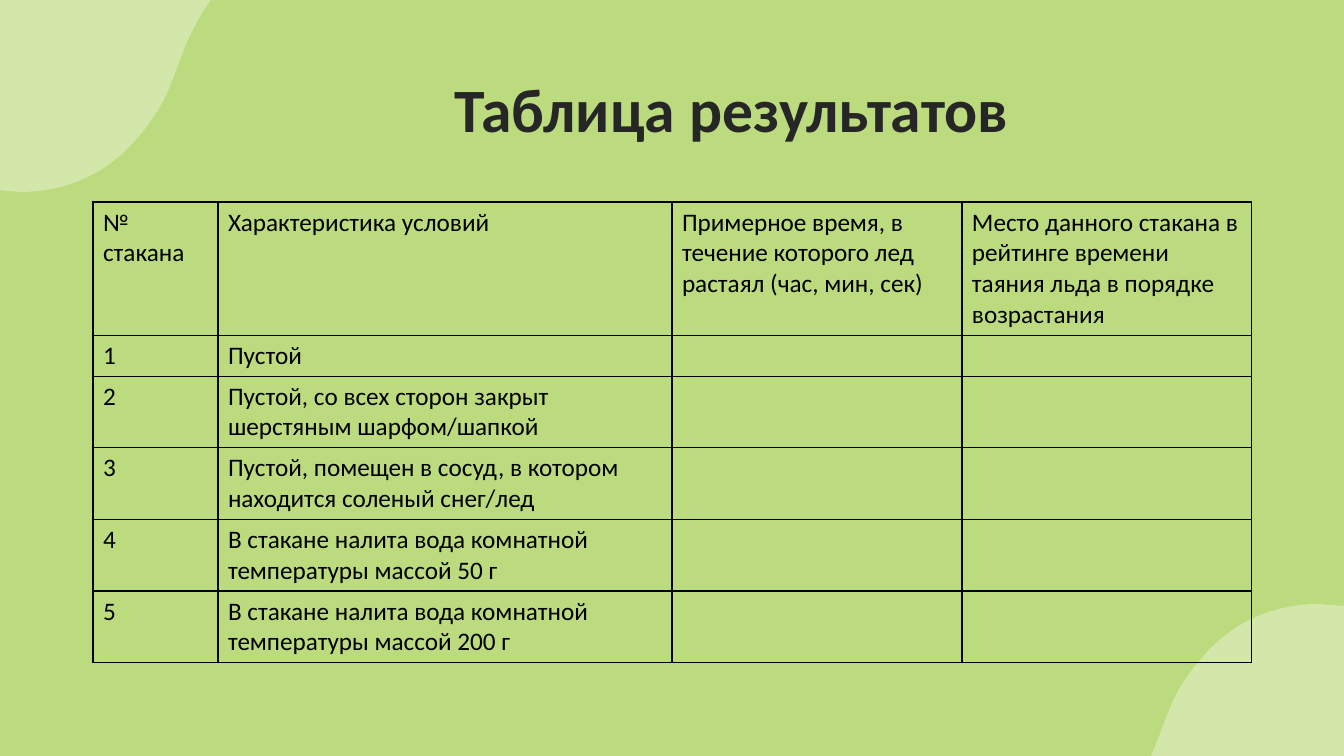
"""Build the slide with the results table of the ice melting experiment."""
import pptx
import pptx.dml.color
import pptx.enum.text
import pptx.oxml
import pptx.oxml.ns
import pptx.util

PX = 914400 / 100.8
COLORS = {"background": "BBDB7E", "wave": "D2E7A9", "title": "262626", "text": "000000", "border": "000000"}
TITLE_FONT = {"name": "Calibri", "size": pptx.util.Pt(44), "bold": True}
CELL_FONT = {"name": "Calibri", "size": pptx.util.Pt(18), "bold": False}
WAVE_START = (192, 0)
WAVE_CURVES = [
    [(165, 0), (119, 7), (82, 46)],
    [(28, 103), (44, 132), (0, 194)],
]
WAVE_CORNERS = [(217, 194), (217, 2)]
COLUMN_WIDTHS = [125, 454, 290, 290]
ROW_HEIGHTS = [132, 41, 71, 71, 71, 71]
HEADINGS = [
    "№ стакана",
    "Характеристика условий",
    "Примерное время, в течение которого лед растаял (час, мин, сек)",
    "Место данного стакана в рейтинге времени таяния льда в порядке возрастания",
]
CONDITIONS = [
    "Пустой",
    "Пустой, со всех сторон закрыт шерстяным шарфом/шапкой",
    "Пустой, помещен в сосуд, в котором находится соленый снег/лед",
    "В стакане налита вода комнатной температуры массой 50 г",
    "В стакане налита вода комнатной температуры массой 200 г",
]


def px(length):
    return pptx.util.Emu(round(length * PX))


def rgb(name):
    return pptx.dml.color.RGBColor.from_string(COLORS[name])


def bezier(start, controls, steps=24):
    corners = [start, *controls]
    for step in range(1, steps + 1):
        t = step / steps
        weights = [(1 - t) ** 3, 3 * t * (1 - t) ** 2, 3 * t * t * (1 - t), t ** 3]
        yield tuple(sum(w * c[axis] for w, c in zip(weights, corners)) for axis in (0, 1))


class ResultsSlide:
    def __init__(self, presentation):
        self.slide = presentation.slides.add_slide(presentation.slide_layouts[5])
        self.slide.background.fill.solid()
        self.slide.background.fill.fore_color.rgb = rgb("background")

    def style(self, font, values, color):
        for key, value in values.items():
            setattr(font, key, value)
        font.color.rgb = rgb(color)

    def wave(self, left, top, rotation=0):
        points = [WAVE_START]
        for controls in WAVE_CURVES:
            points.extend(bezier(points[-1], controls))
        points.extend(WAVE_CORNERS)
        start, *others = [(px(x), px(y)) for x, y in points]
        outline = self.slide.shapes.build_freeform(*start)
        outline.add_line_segments(others, close=True)
        wave = outline.convert_to_shape(px(left), px(top))
        wave.rotation = rotation
        wave.shadow.inherit = False
        wave.fill.solid()
        wave.fill.fore_color.rgb = rgb("wave")
        wave.line.fill.background()
        self.slide.shapes._spTree.insert(2, wave._element)

    def title(self, text, left, top, width, height):
        title = self.slide.shapes.title
        box = {"left": left, "top": top, "width": width, "height": height}
        for key, value in box.items():
            setattr(title, key, px(value))
        title.text_frame.text = text
        title.text_frame.word_wrap = True
        title.text_frame.vertical_anchor = pptx.enum.text.MSO_ANCHOR.MIDDLE
        heading = title.text_frame.paragraphs[0]
        heading.alignment = pptx.enum.text.PP_ALIGN.CENTER
        heading.line_spacing = 0.9
        self.style(heading.runs[0].font, TITLE_FONT, "title")

    def borders(self, cell):
        properties = cell._tc.get_or_add_tcPr()
        for index, side in enumerate(("lnL", "lnR", "lnT", "lnB")):
            properties.insert(index, pptx.oxml.parse_xml(
                f'<a:{side} {pptx.oxml.ns.nsdecls("a")} w="12700"><a:solidFill>'
                f'<a:srgbClr val="{COLORS["border"]}"/></a:solidFill></a:{side}>'))

    def table(self, rows, left, top):
        frame = self.slide.shapes.add_table(
            len(rows), len(COLUMN_WIDTHS), px(left), px(top), px(sum(COLUMN_WIDTHS)), px(sum(ROW_HEIGHTS)))
        table = frame.table
        table.first_row = table.horz_banding = False
        for column, width in zip(table.columns, COLUMN_WIDTHS):
            column.width = px(width)
        for row, height, texts in zip(table.rows, ROW_HEIGHTS, rows):
            row.height = px(height)
            for cell, text in zip(row.cells, texts):
                cell.text = text
                cell.fill.background()
                self.borders(cell)
                for run in cell.text_frame.paragraphs[0].runs:
                    self.style(run.font, CELL_FONT, "text")


def main():
    presentation = pptx.Presentation()
    presentation.slide_width, presentation.slide_height = px(1344), px(756)
    results = ResultsSlide(presentation)
    results.wave(1127, 604)
    results.wave(-5, -2, rotation=180)
    results.title("Таблица результатов", 212, 40, 1040, 146)
    glasses = [[str(number), condition, "", ""] for number, condition in enumerate(CONDITIONS, 1)]
    results.table([HEADINGS, *glasses], 93, 202)
    presentation.save("out.pptx")


if __name__ == "__main__":
    main()
